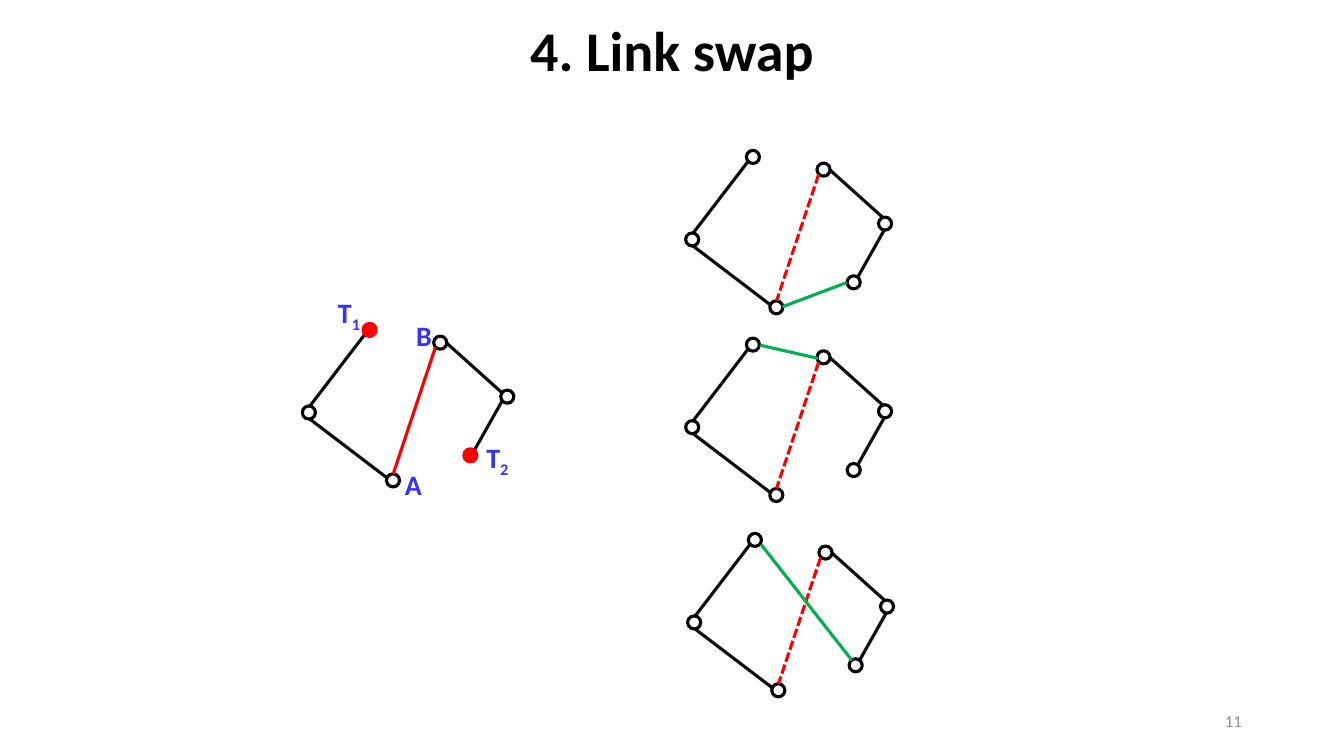
from lxml.etree import SubElement
from pptx import Presentation
from pptx.dml.color import RGBColor
from pptx.enum.dml import MSO_LINE
from pptx.enum.shapes import MSO_CONNECTOR, MSO_SHAPE
from pptx.enum.text import MSO_ANCHOR, PP_ALIGN
from pptx.oxml.ns import qn
from pptx.util import Cm, Pt

COLORS = {
    "title": "000000", "outline": "000000", "node": "FFFFFF", "edge": "0D0D0D",
    "terminal": "FF0000", "removed": "FF0000", "added": "00B050",
    "label": "3333FF", "number": "8C8C8C",
}
NODE_SIZE = 0.33
LINE_WIDTH = Pt(2.25)

# Node corners and link ends, in cm from the corner of a path
NODES = {
    "T1": (1.53, 0), "left": (0, 2.08), "A": (2.12, 3.79),
    "B": (3.31, 0.32), "right": (4.86, 1.68), "T2": (4.07, 3.16),
}
EDGES = [
    ((1.57, 0.28), (0.03, 2.29)),
    ((2.29, 4.01), (0.03, 2.29)),
    ((5.18, 1.88), (3.51, 0.38)),
    ((5.03, 1.96), (4.22, 3.4)),
]
LINK_AB = ((3.35, 0.61), (2.29, 3.79))

# Path corner and the link that replaces A-B
SWAPS = [
    ((17.28, 3.79), ((4.06, 3.33), (2.44, 3.94))),
    ((17.28, 8.52), ((3.33, 0.51), (1.88, 0.18))),
    ((17.33, 13.44), ((4.14, 3.2), (1.85, 0.28))),
]

# Letter, subscript, left, top, width
LABELS = [
    ("A", "", 9.91, 11.63, 1.02),
    ("B", "", 10.19, 7.87, 0.99),
    ("T", "2", 11.94, 11.0, 1.19),
    ("T", "1", 8.2, 7.34, 1.19),
]


def rgb(role):
    return RGBColor.from_string(COLORS[role])


def add_text(slide, text, box, size, role, align, bold=False, wrap=True, subscript=""):
    frame = slide.shapes.add_textbox(*map(Cm, box)).text_frame
    frame.word_wrap = wrap
    frame.vertical_anchor = MSO_ANCHOR.MIDDLE
    paragraph = frame.paragraphs[0]
    paragraph.alignment = align
    font = paragraph.font
    font.name, font.size, font.bold = "Calibri", Pt(size), bold
    font.color.rgb = rgb(role)
    paragraph.add_run().text = text
    if subscript:
        lowered = paragraph.add_run()
        lowered.text = subscript
        lowered.font._element.set("baseline", "-25000")
    return paragraph


def add_link(slide, origin, ends, role, dashed=False):
    points = [Cm(o + d) for end in ends for o, d in zip(origin, end)]
    link = slide.shapes.add_connector(MSO_CONNECTOR.STRAIGHT, *points)
    link.line.width = LINE_WIDTH
    link.line.color.rgb = rgb(role)
    if dashed:
        link.line.dash_style = MSO_LINE.SQUARE_DOT
    SubElement(link._element.spPr, qn("a:effectLst"))


def add_node(slide, origin, offset, fill, outline):
    left, top = (Cm(o + d) for o, d in zip(origin, offset))
    node = slide.shapes.add_shape(MSO_SHAPE.OVAL, left, top, Cm(NODE_SIZE), Cm(NODE_SIZE))
    node.shadow.inherit = False
    node.fill.solid()
    node.fill.fore_color.rgb = rgb(fill)
    node.line.color.rgb = rgb(outline)
    node.line.width = LINE_WIDTH


def add_path(slide, origin, terminals=(), right_shift=0):
    for ends in EDGES:
        add_link(slide, origin, ends, "edge")
    for name, (x, y) in NODES.items():
        if name == "right":
            x += right_shift
        fill, outline = ("terminal",) * 2 if name in terminals else ("node", "outline")
        add_node(slide, origin, (x, y), fill, outline)


def main():
    deck = Presentation()
    deck.slide_width, deck.slide_height = Cm(33.87), Cm(19.05)
    slide = deck.slides.add_slide(deck.slide_layouts[6])

    # Title
    title = add_text(slide, "4. Link swap", (0, -0.05, 33.87, 2.79), 40, "title",
                     PP_ALIGN.CENTER, bold=True)
    title.line_spacing = 0.9

    # Path before the swap
    start = (7.62, 8.15)
    add_path(slide, start, terminals=("T1", "T2"), right_shift=0.14)
    add_link(slide, start, LINK_AB, "removed")
    for letter, subscript, left, top, width in LABELS:
        add_text(slide, letter, (left, top, width, 1.17), 20, "label",
                 PP_ALIGN.CENTER, bold=True, wrap=False, subscript=subscript)

    # Three possible swaps
    for origin, new_link in SWAPS:
        add_path(slide, origin)
        add_link(slide, origin, LINK_AB, "removed", dashed=True)
        add_link(slide, origin, new_link, "added")

    # Slide number
    add_text(slide, "11", (23.93, 17.65, 7.62, 1.02), 12, "number", PP_ALIGN.RIGHT)

    deck.save("out.pptx")


if __name__ == "__main__":
    main()
